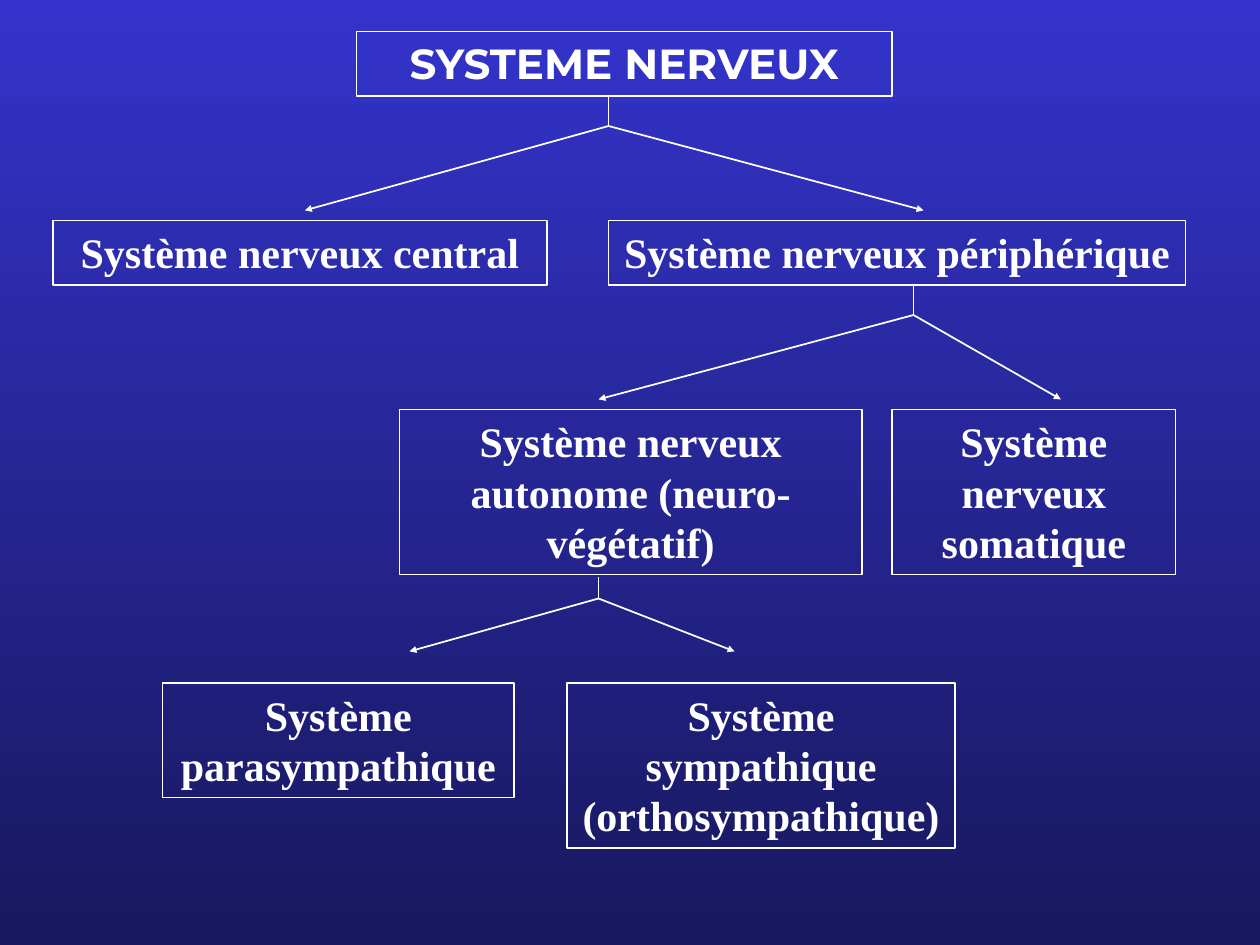
import pptx
import pptx.dml.color
import pptx.enum.shapes
import pptx.enum.text
import pptx.oxml.ns
import pptx.oxml.xmlchemy
import pptx.util

Inches = pptx.util.Inches
Pt = pptx.util.Pt
WHITE = pptx.dml.color.RGBColor(0xFF, 0xFF, 0xFF)
BLUE = pptx.dml.color.RGBColor(0x33, 0x33, 0xCC)
NAVY = pptx.dml.color.RGBColor(0x18, 0x18, 0x5E)

ONE_LINE, TWO_LINES, THREE_LINES = 0.51, 0.91, 1.31


class Diagram:
    """Draws white outlined boxes and arrows on one slide."""

    title_font = "Montserrat"
    box_font = "Times New Roman"
    size = Pt(24)
    line_width = Pt(1)

    def __init__(self, slide):
        self.slide = slide

    def background(self, top, bottom):
        fill = self.slide.background.fill
        fill.gradient()
        fill.gradient_angle = 270
        for stop, color in zip(fill.gradient_stops, (top, bottom)):
            stop.color.rgb = color

    def outline(self, line):
        line.color.rgb = WHITE
        line.width = self.line_width

    def format_box(self, sp, text, font):
        self.outline(sp.line)
        tf = sp.text_frame
        tf.text = text
        tf.word_wrap = True
        tf.auto_size = pptx.enum.text.MSO_AUTO_SIZE.NONE
        tf.vertical_anchor = pptx.enum.text.MSO_ANCHOR.TOP
        p = tf.paragraphs[0]
        p.alignment = pptx.enum.text.PP_ALIGN.CENTER
        r = p.runs[0]
        r.font.name = font
        r.font.size = self.size
        r.font.bold = True
        r.font.color.rgb = WHITE

    def title(self, text, x, y, w, h):
        sp = self.slide.shapes.title
        sp.left, sp.top, sp.width, sp.height = map(Inches, (x, y, w, h))
        self.format_box(sp, text, self.title_font)

    def box(self, text, x, y, w, h):
        sp = self.slide.shapes.add_textbox(*map(Inches, (x, y, w, h)))
        self.format_box(sp, text, self.box_font)

    def line(self, start, end, arrow=False):
        cxn = self.slide.shapes.add_connector(
            pptx.enum.shapes.MSO_CONNECTOR.STRAIGHT,
            *map(Inches, (*start, *end)))
        self.outline(cxn.line)
        if arrow:
            tail = pptx.oxml.xmlchemy.OxmlElement("a:tailEnd")
            for name, value in (("type", "triangle"),
                                ("w", "sm"), ("len", "sm")):
                tail.set(name, value)
            cxn.line._get_or_add_ln().append(tail)
        sp_pr = cxn._element.find(pptx.oxml.ns.qn("p:spPr"))
        sp_pr.append(pptx.oxml.xmlchemy.OxmlElement("a:effectLst"))

    def fork(self, x, top, split, bottom, targets):
        """A short stem from top to split, then an arrow to each target x."""
        self.line((x, top), (x, split))
        for target in targets:
            self.line((x, split), (target, bottom), arrow=True)


def main():
    prs = pptx.Presentation()
    prs.slide_width, prs.slide_height = Inches(10), Inches(7.5)
    diagram = Diagram(prs.slides.add_slide(prs.slide_layouts[5]))
    diagram.background(BLUE, NAVY)

    diagram.title("SYSTEME NERVEUX", 2.83, 0.25, 4.25, ONE_LINE)
    for text, x, y, w, h in (
        ("Système nerveux central", 0.42, 1.75, 3.92, ONE_LINE),
        ("Système nerveux périphérique", 4.83, 1.75, 4.58, ONE_LINE),
        ("Système nerveux autonome (neuro-végétatif)",
         3.17, 3.25, 3.67, THREE_LINES),
        ("Système nerveux somatique", 7.08, 3.25, 2.25, THREE_LINES),
        ("Système parasympathique", 1.29, 5.42, 2.79, TWO_LINES),
        ("Système sympathique (orthosympathique)",
         4.5, 5.42, 3.08, THREE_LINES),
    ):
        diagram.box(text, x, y, w, h)

    diagram.fork(4.83, 0.75, 1, 1.67, (2.42, 7.33))
    diagram.fork(7.25, 2.25, 2.5, 3.17, (4.75, 8.42))
    diagram.fork(4.75, 4.58, 4.75, 5.17, (3.25, 5.83))

    prs.save("out.pptx")


if __name__ == "__main__":
    main()
